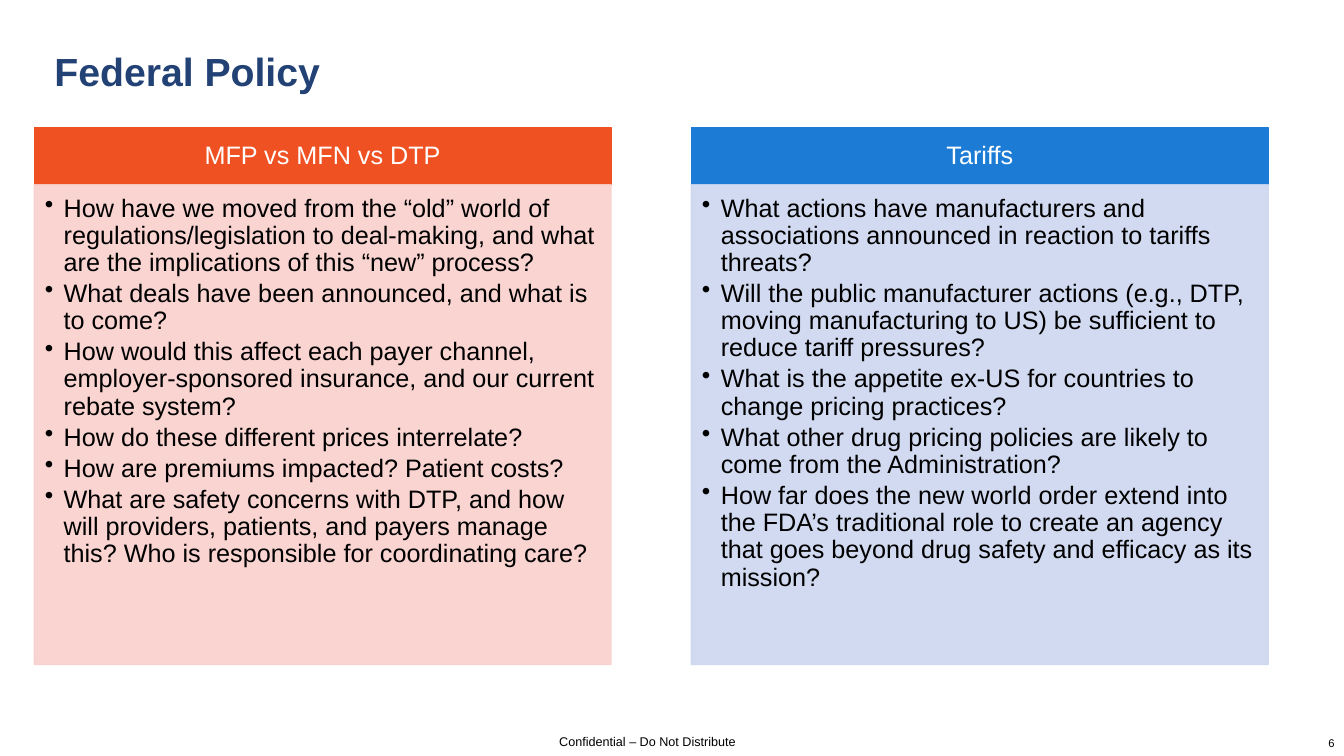
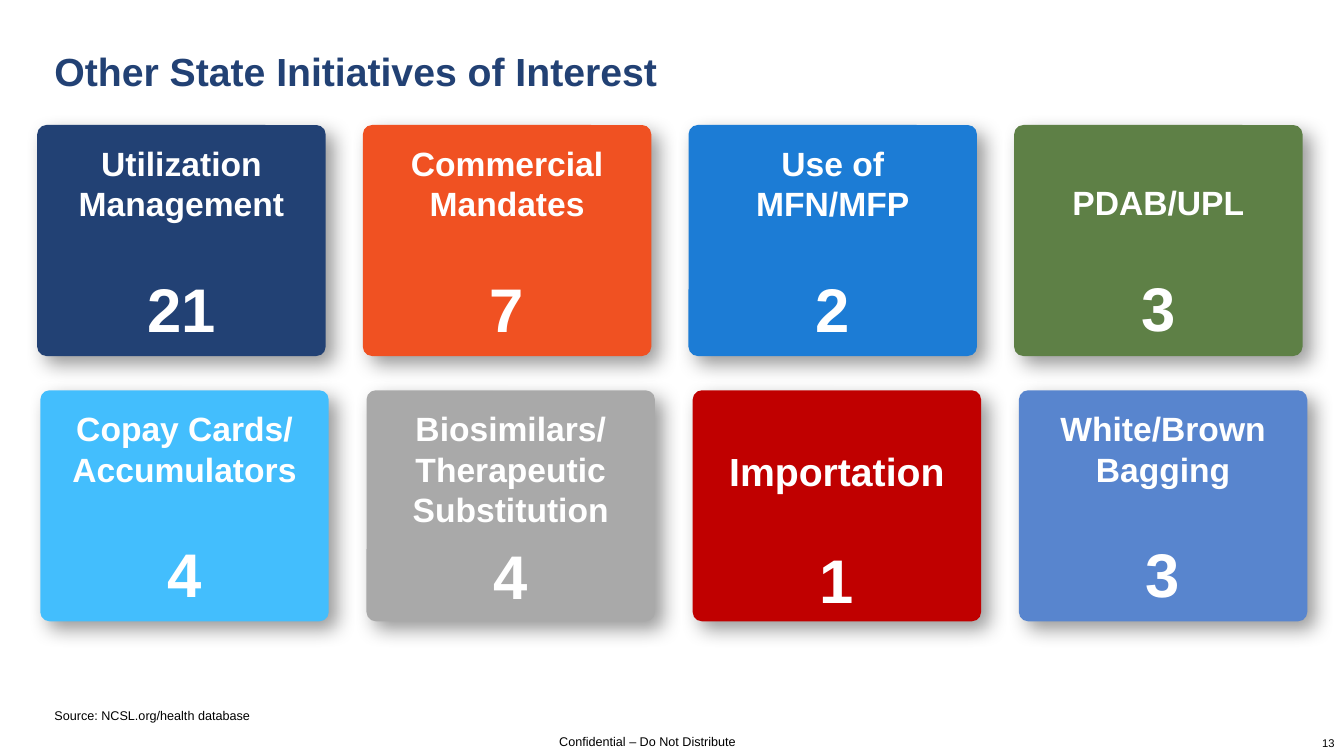
from pptx import Presentation
from pptx.dml.color import RGBColor
from pptx.enum.shapes import MSO_SHAPE as SHAPE
from pptx.enum.text import MSO_ANCHOR as ANCHOR, PP_ALIGN as ALIGN
from pptx.oxml import parse_xml
from pptx.oxml.ns import nsdecls, qn
from pptx.util import Pt

FONT = "Arial"
COLORS = {
    "navy": "224174", "orange": "F05122", "blue": "1C7CD5", "green": "5E8046",
    "sky": "43BEFD", "gray": "A9A9A9", "red": "C00000", "periwinkle": "5885CE",
    "pink": "F9D0CD", "lavender": "CDD7EF", "white": "FFFFFF", "black": "000000",
}

# Column layout, in points
COL_LEFT, COL_STEP, COL_W = 24.5, 469.4, 412
COL_TOP, HEAD_H, BODY_H = 91.2, 40.8, 342.7

# Tile layout, in points
TILE_W, TILE_H, TILE_PAD = 206, 165, 10.8
BLANK_LINE = 28  # room left above a number or a single-line label

COLUMNS = [
    ("MFP vs MFN vs DTP", "orange", "pink", [
        "How have we moved from the “old” world of regulations/legislation to "
        "deal-making, and what are the implications of this “new” process?",
        "What deals have been announced, and what is to come?",
        "How would this affect each payer channel, employer-sponsored insurance, "
        "and our current rebate system?",
        "How do these different prices interrelate?",
        "How are premiums impacted? Patient costs?",
        "What are safety concerns with DTP, and how will providers, patients, and "
        "payers manage this? Who is responsible for coordinating care?",
    ]),
    ("Tariffs", "blue", "lavender", [
        "What actions have manufacturers and associations announced in reaction "
        "to tariffs threats?",
        "Will the public manufacturer actions (e.g., DTP, moving manufacturing "
        "to US) be sufficient to reduce tariff pressures?",
        "What is the appetite ex-US for countries to change pricing practices?",
        "What other drug pricing policies are likely to come from the "
        "Administration?",
        "How far does the new world order extend into the FDA’s traditional role "
        "to create an agency that goes beyond drug safety and efficacy as its "
        "mission?",
    ]),
]

# Rows of tiles: (left, top, step, [(label, number, color, options)])
TILE_ROWS = [
    (26.6, 89.3, 232.6, [
        ("Utilization Management", "21", "navy", {}),
        ("Commercial Mandates", "7", "orange", {}),
        ("Use of MFN/MFP", "2", "blue", {}),
        ("PDAB/UPL", "3", "green", {"lead": BLANK_LINE}),
    ]),
    (28.8, 278.8, 233, [
        ("Copay Cards/ Accumulators", "4", "sky", {}),
        ("Biosimilars/ Therapeutic Substitution", "4", "gray", {"gap": 0}),
        ("Importation", "1", "red", {"lead": BLANK_LINE, "size": 28}),
        ("White/Brown Bagging", "3", "periwinkle", {}),
    ]),
]


def rgb(name):
    return RGBColor.from_string(COLORS[name])


def add_text(tf, text, size=18, color="black", bold=False, align=ALIGN.LEFT,
             before=0, after=0, spacing=None, bullet=None):
    """Write a paragraph, using the empty first one if it is still free."""
    p = tf.paragraphs[0]
    if p.runs:
        p = tf.add_paragraph()
    p.alignment = align
    p.space_before, p.space_after = Pt(before), Pt(after)
    if spacing:
        p.line_spacing = spacing
    if bullet:
        pPr = p._p.get_or_add_pPr()
        pPr.set("marL", str(Pt(13.5)))
        pPr.set("indent", str(-Pt(13.5)))
        pPr.append(parse_xml(f'<a:buChar {nsdecls("a")} char="{bullet}"/>'))
    r = p.add_run()
    r.text = text
    r.font.name, r.font.size, r.font.bold = FONT, Pt(size), bold
    r.font.color.rgb = rgb(color)


def set_frame(tf, insets, anchor=ANCHOR.TOP):
    tf.word_wrap = True
    tf.vertical_anchor = anchor
    (tf.margin_left, tf.margin_top,
     tf.margin_right, tf.margin_bottom) = (Pt(i) for i in insets)
    return tf


def add_label(s, box, text, insets=(0, 3.6, 0, 3.6), anchor=ANCHOR.BOTTOM, **fmt):
    tb = s.shapes.add_textbox(*(Pt(v) for v in box))
    add_text(set_frame(tb.text_frame, insets, anchor), text, **fmt)


def add_box(s, kind, box, color, outline=True):
    sp = s.shapes.add_shape(kind, *(Pt(v) for v in box))
    sp.fill.solid()
    sp.fill.fore_color.rgb = rgb(color)
    if outline:
        sp.line.color.rgb = rgb(color)
        sp.line.width = Pt(1)
    else:
        sp.line.fill.background()
    sp.shadow.inherit = False
    return sp


def set_opacity(sp, percent):
    for clr in sp._element.spPr.iter(qn("a:srgbClr")):
        clr.append(parse_xml(f'<a:alpha {nsdecls("a")} val="{percent * 1000}"/>'))


def add_shadow(sp):
    sp._element.spPr.find(qn("a:effectLst")).append(parse_xml(
        f'<a:outerShdw {nsdecls("a")} blurRad="{Pt(14)}" dist="{Pt(8)}" '
        f'dir="{45 * 60000}" algn="tl" rotWithShape="0">'
        f'<a:srgbClr val="{COLORS["black"]}"><a:alpha val="40000"/></a:srgbClr>'
        '</a:outerShdw>'))


def add_slide(prs, title, number):
    """Start a slide with the shared title, footer and page number."""
    s = prs.slides.add_slide(prs.slide_layouts[6])
    add_label(s, (311, 520.6, 303, 18), "Confidential – Do Not Distribute",
              size=9, align=ALIGN.CENTER)
    add_label(s, (38.9, 30.2, 882, 82), title, anchor=ANCHOR.TOP,
              size=28, color="navy", bold=True)
    add_label(s, (914.4, 510.5, 38.9, 28.8), str(number),
              size=8, align=ALIGN.RIGHT)
    return s


def add_column(s, left, heading, head_color, body_color, questions):
    head = add_box(s, SHAPE.RECTANGLE, (left, COL_TOP, COL_W, HEAD_H), head_color)
    add_text(set_frame(head.text_frame, (10, 5.8, 10, 5.8), ANCHOR.MIDDLE),
             heading, color="white", align=ALIGN.CENTER, spacing=0.9)
    body = add_box(s, SHAPE.RECTANGLE,
                   (left, COL_TOP + HEAD_H, COL_W, BODY_H), body_color)
    set_opacity(body, 90)
    tf = set_frame(body.text_frame, (7.5, 7.5, 10, 11.5))
    for question in questions:
        add_text(tf, question, spacing=0.9, after=2.7, bullet="•")


def add_tile(s, left, top, label, number, color, size=24, lead=0, gap=BLANK_LINE):
    sp = add_box(s, SHAPE.ROUNDED_RECTANGLE, (left, top, TILE_W, TILE_H), color,
                 outline=False)
    sp.adjustments[0] = 0.04
    add_shadow(sp)
    tf = set_frame(sp.text_frame, (TILE_PAD, TILE_PAD + lead, TILE_PAD, TILE_PAD))
    style = dict(color="white", bold=True, align=ALIGN.CENTER, after=6)
    add_text(tf, label, size=size, **style)
    add_text(tf, number, size=44, before=gap, **style)


def main():
    prs = Presentation()
    prs.slide_width, prs.slide_height = Pt(960), Pt(540)

    # Federal policy: two columns of questions
    s = add_slide(prs, "Federal Policy", 6)
    for i, column in enumerate(COLUMNS):
        add_column(s, COL_LEFT + i * COL_STEP, *column)

    # State initiatives: two rows of counted tiles
    s = add_slide(prs, "Other State Initiatives of Interest", 13)
    add_label(s, (38.9, 475.2, 754.6, 41), "Source: NCSL.org/health database",
              insets=(0, 3.6, 0, 0), size=9)
    for left, top, step, tiles in TILE_ROWS:
        for i, (label, number, color, options) in enumerate(tiles):
            add_tile(s, left + i * step, top, label, number, color, **options)

    prs.save("out.pptx")


if __name__ == "__main__":
    main()
